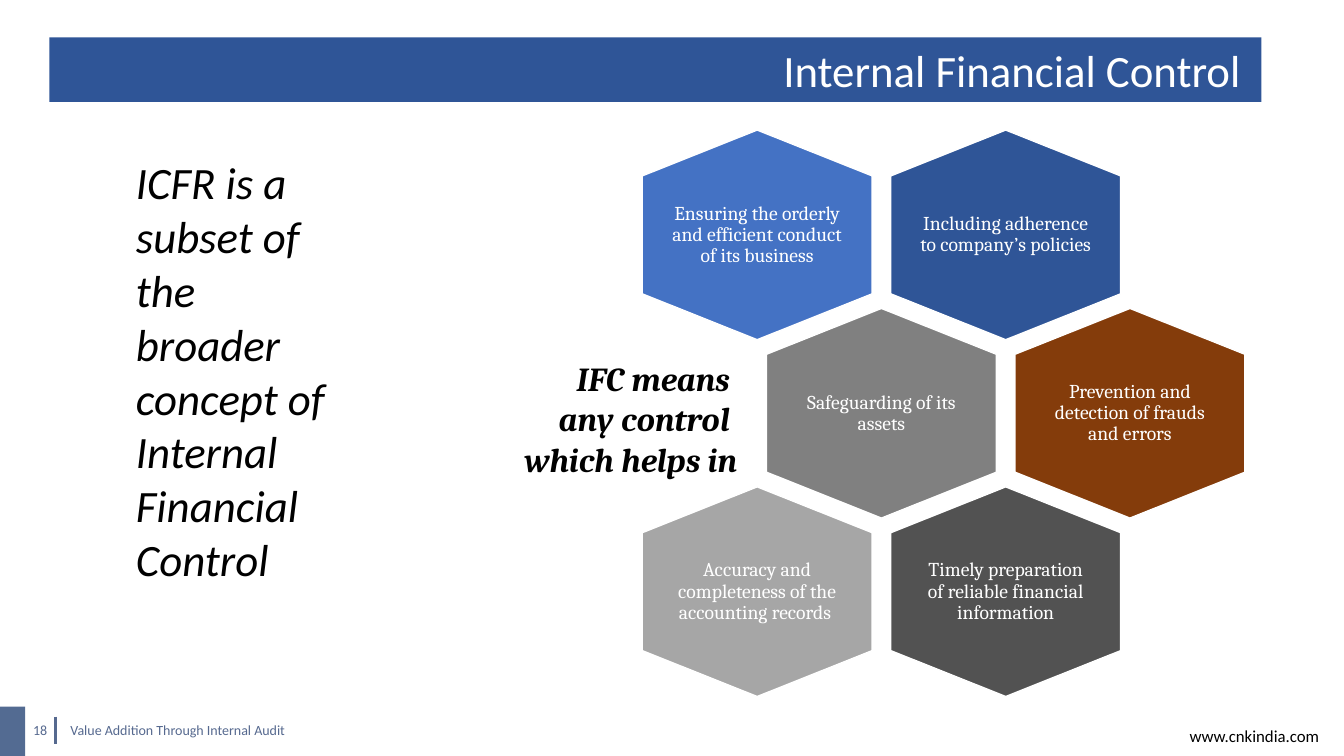
from lxml.etree import SubElement
from pptx import Presentation
from pptx.dml.color import RGBColor
from pptx.enum.shapes import MSO_CONNECTOR, MSO_SHAPE
from pptx.enum.text import MSO_ANCHOR, MSO_AUTO_SIZE, PP_ALIGN
from pptx.oxml.ns import qn
from pptx.util import Inches, Pt

WHITE = RGBColor(0xFF, 0xFF, 0xFF)
BLACK = RGBColor(0x00, 0x00, 0x00)
NAVY = RGBColor(0x2F, 0x55, 0x97)
BLUE = RGBColor(0x44, 0x72, 0xC4)
GREY = RGBColor(0x80, 0x80, 0x80)
BROWN = RGBColor(0x84, 0x3C, 0x0B)
LIGHT_GREY = RGBColor(0xA6, 0xA6, 0xA6)
DARK_GREY = RGBColor(0x52, 0x52, 0x52)
FOOTER_BLOCK = RGBColor(0x53, 0x6B, 0x92)
FOOTER_TEXT = RGBColor(0x56, 0x69, 0x8F)

deck = Presentation()
deck.slide_width, deck.slide_height = Inches(13.33), Inches(7.5)
page = deck.slides.add_slide(deck.slide_layouts[5])


def write(frame, lines, size, color, font="Calibri", align=PP_ALIGN.LEFT,
          bold=False, italic=False):
    for index, line in enumerate(lines):
        para = frame.paragraphs[0] if index == 0 else frame.add_paragraph()
        para.alignment = align
        span = para.add_run()
        span.text = line
        span.font.name, span.font.size = font, Pt(size)
        span.font.bold, span.font.italic = bold, italic
        span.font.color.rgb = color


def add_text(place, lines, size, color, wrap=True, **style):
    box = page.shapes.add_textbox(*map(Inches, place))
    box.text_frame.word_wrap = wrap
    write(box.text_frame, lines, size, color, **style)
    return box


# Title bar
title = page.shapes.title
title.left, title.top, title.width, title.height = map(Inches, (0.49, 0.37, 12.02, 0.64))
title.fill.solid()
title.fill.fore_color.rgb = NAVY
title.text_frame.auto_size = MSO_AUTO_SIZE.NONE
title.text_frame.vertical_anchor = MSO_ANCHOR.TOP
write(title.text_frame, ["Internal Financial Control "], 32, WHITE, align=PP_ALIGN.RIGHT)

# Footer
block = page.shapes.add_shape(MSO_SHAPE.RECTANGLE, 0, Inches(7.01), Inches(0.25), Inches(0.49))
block.shadow.inherit = False
block.fill.solid()
block.fill.fore_color.rgb = FOOTER_BLOCK
block.line.fill.background()
number = add_text((0.23, 7.04, 0.41, 0.4), ["18"], 10, FOOTER_TEXT)
number.text_frame.vertical_anchor = MSO_ANCHOR.MIDDLE
divider = page.shapes.add_connector(MSO_CONNECTOR.STRAIGHT, Inches(0.55), Inches(7.11),
                                    Inches(0.55), Inches(7.38))
divider.line.color.rgb = FOOTER_TEXT
divider.line.width = Pt(1.75)
SubElement(divider._element.spPr, qn("a:effectLst"))
add_text((0.6, 7.11, 2.72, 0.44), ["Value Addition Through Internal Audit"], 10,
         FOOTER_TEXT, wrap=False)
add_text((11.7, 7.15, 1.6, 0.3), ["www.cnkindia.com"], 12, BLACK, wrap=False)

# Honeycomb: the middle row is shifted by half a column
HEX_LEFT, HEX_TOP = 6.37, 1.29
HEX_WIDTH, HEX_HEIGHT, SHOULDER = 2.28, 2.08, 0.455
COLUMN, ROW = 2.465, 1.77
WIDE, NARROW = 0.24, 0.29  # side margins of the text
cells = [
    (0, 0, BLUE, WIDE, "Ensuring the orderly and efficient conduct of its business"),
    (0, 1, NAVY, NARROW, "Including adherence to company’s policies"),
    (1, 0, GREY, NARROW, "Safeguarding of its assets"),
    (1, 1, BROWN, WIDE, "Prevention and detection of frauds and errors"),
    (2, 0, LIGHT_GREY, WIDE, "Accuracy and completeness of the accounting records "),
    (2, 1, DARK_GREY, NARROW, "Timely preparation of reliable financial information"),
]
for row, column, color, margin, words in cells:
    left = HEX_LEFT + (column + row % 2 / 2) * COLUMN
    top = HEX_TOP + row * ROW
    middle, right, bottom = left + HEX_WIDTH / 2, left + HEX_WIDTH, top + HEX_HEIGHT
    corners = [(middle, top), (right, top + SHOULDER), (right, bottom - SHOULDER),
               (middle, bottom), (left, bottom - SHOULDER), (left, top + SHOULDER)]
    points = [(Inches(x), Inches(y)) for x, y in corners]
    outline = page.shapes.build_freeform(*points[0], scale=1.0)
    outline.add_line_segments(points[1:], close=True)
    cell = outline.convert_to_shape()
    cell.shadow.inherit = False
    cell.fill.solid()
    cell.fill.fore_color.rgb = color
    cell.line.color.rgb = WHITE
    cell.line.width = Pt(1)
    frame = cell.text_frame
    frame.word_wrap = True
    frame.vertical_anchor = MSO_ANCHOR.MIDDLE
    frame.margin_left = frame.margin_right = Inches(margin)
    frame.margin_top = frame.margin_bottom = Inches(margin + 0.03)
    write(frame, [words], 14, WHITE, font="Cambria", align=PP_ALIGN.CENTER)
    frame.paragraphs[0].line_spacing = 0.9

# Statements beside the honeycomb
add_text((4.61, 3.5, 2.8, 1.31), ["IFC means ", "any control ", "which helps in"], 24, BLACK,
         font="Cambria", align=PP_ALIGN.RIGHT, bold=True, italic=True)
add_text((1.25, 1.49, 2.13, 4.41),
         ["ICFR is a subset of the broader concept of Internal Financial Control"],
         32, BLACK, italic=True)

deck.save("out.pptx")
